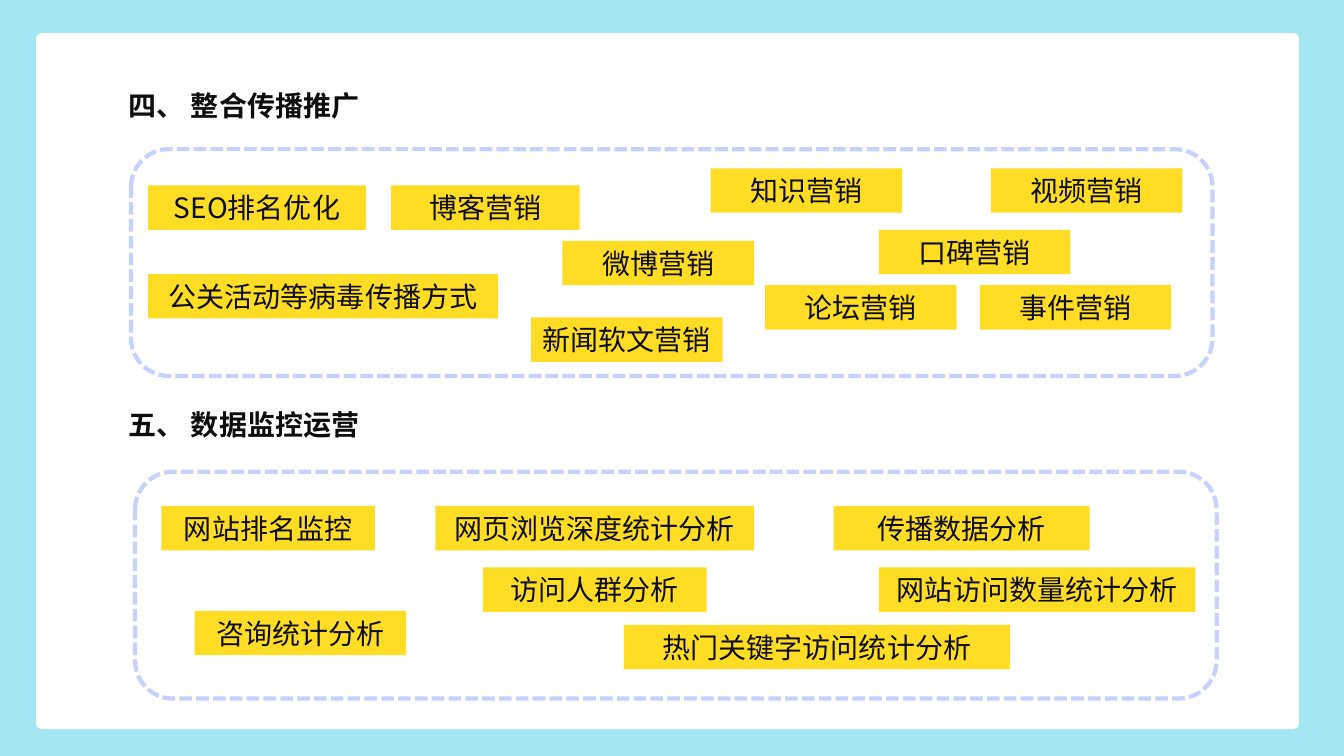
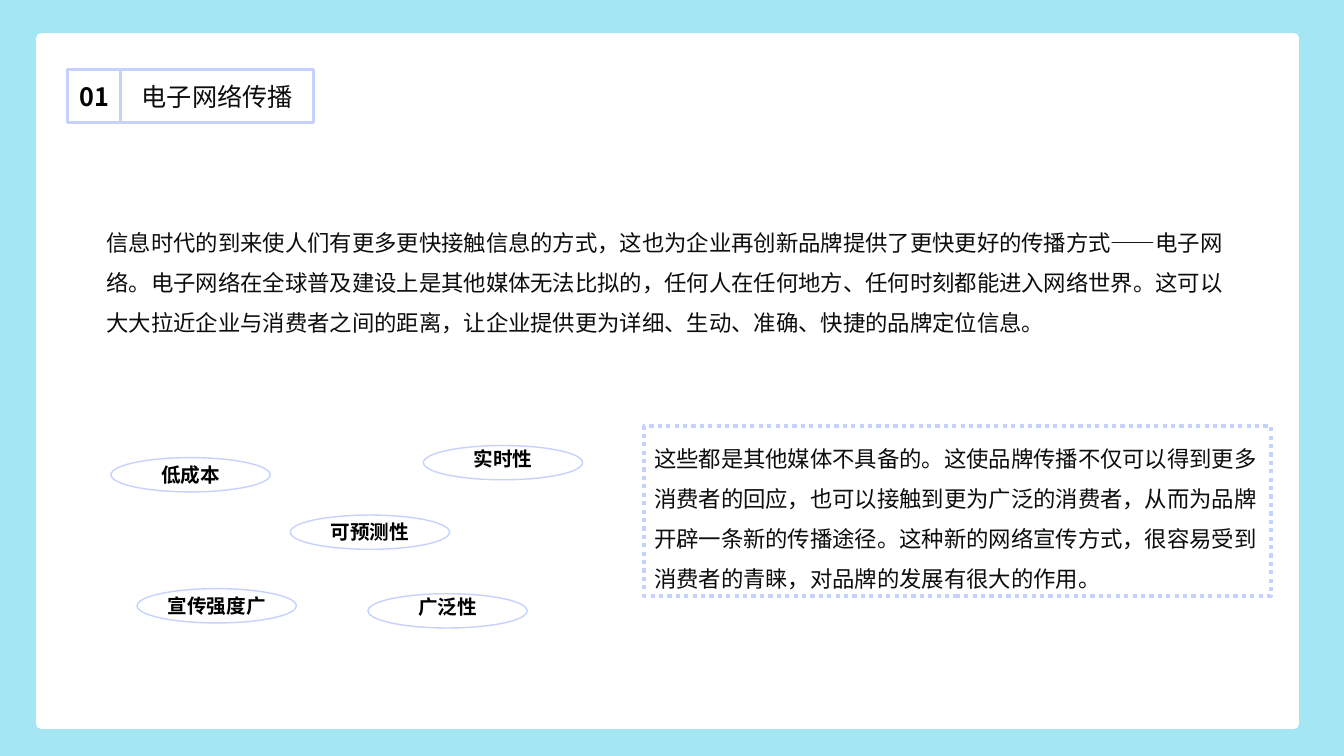
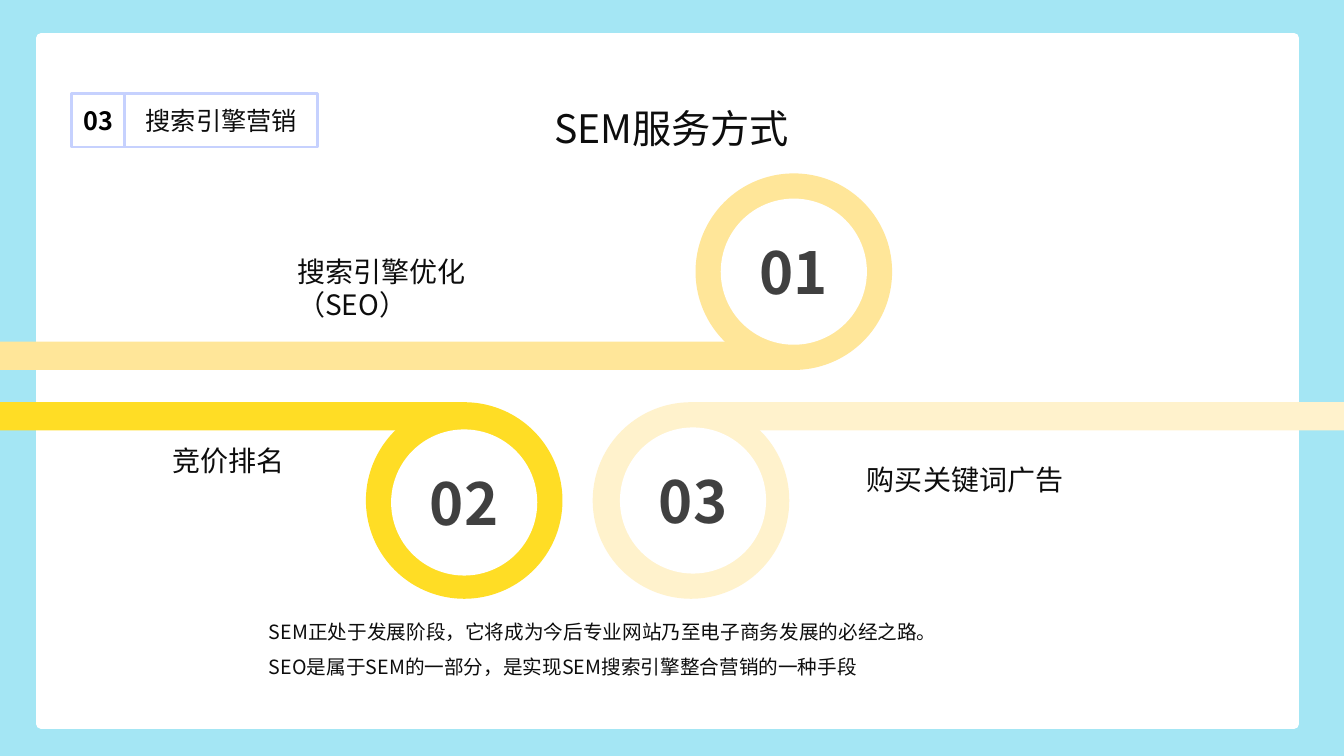
from dataclasses import dataclass

from lxml.etree import SubElement
from pptx import Presentation
from pptx.dml.color import RGBColor
from pptx.enum.dml import MSO_LINE as Dash
from pptx.enum.shapes import MSO_SHAPE as Preset
from pptx.enum.text import MSO_ANCHOR as Anchor, PP_ALIGN as Align
from pptx.oxml.ns import qn
from pptx.shapes.autoshape import Shape
from pptx.slide import Slide
from pptx.util import Inches, Length, Pt

SKY = RGBColor(0xA4, 0xE6, 0xF4)
WHITE = RGBColor(0xFF, 0xFF, 0xFF)
BLACK = RGBColor(0x00, 0x00, 0x00)
INK = RGBColor(0x0D, 0x0D, 0x0D)
GRAY = RGBColor(0x40, 0x40, 0x40)
LAVENDER = RGBColor(0xC6, 0xD1, 0xFE)
YELLOW = RGBColor(0xFF, 0xDD, 0x25)
SAND = RGBColor(0xFF, 0xE6, 0x99)
CREAM = RGBColor(0xFF, 0xF2, 0xCC)

FONT = "Noto Sans CJK SC"
COLUMNS, ROWS = 133.33, 75
TAG_ROWS = 4.4
RING, HOLE, BAND = 19.5, 14.5, 2.8


def cells(count: float) -> Length:
    return Inches(count / 10)


@dataclass(frozen=True)
class Box:
    col: float
    row: float
    cols: float
    rows: float

    def emu(self) -> tuple[Length, ...]:
        return tuple(map(cells, (self.col, self.row, self.cols, self.rows)))


@dataclass(frozen=True)
class Type:
    size: float
    color: RGBColor = INK
    bold: bool = False
    align: Align = Align.CENTER
    anchor: Anchor = Anchor.MIDDLE
    spacing: float = 1.0


@dataclass(frozen=True)
class Border:
    width: float
    dash: Dash | None = None
    color: RGBColor = LAVENDER


@dataclass(frozen=True)
class Tag:
    label: str
    col: float
    row: float
    cols: float = 19


@dataclass(frozen=True)
class Section:
    heading: str
    heading_row: float
    frame: Box
    tags: tuple[Tag, ...]


@dataclass(frozen=True)
class Trait:
    label: str
    col: float
    row: float
    lift: float = 0


@dataclass(frozen=True)
class Loop:
    number: str
    col: float
    row: float
    color: RGBColor
    band_row: float
    to_right: bool = False
    hole_col: float = 2.5
    hole_row: float = 2.5


TAG_TYPE = Type(20)
HEADING_TYPE = Type(20, bold=True)
TRAIT_TYPE = Type(14, BLACK, bold=True)
BADGE_NUMBER_TYPE = Type(18, BLACK, bold=True)
BADGE_TITLE_TYPE = Type(18)
LOOP_TYPE = Type(41.4, GRAY, bold=True)
BODY_TYPE = Type(16, align=Align.LEFT, anchor=Anchor.TOP, spacing=1.5)
NOTE_TYPE = Type(14, align=Align.LEFT, anchor=Anchor.TOP, spacing=1.5)
TITLE_TYPE = Type(28, align=Align.LEFT)
SEO_TYPE = Type(20, align=Align.LEFT)

SECTIONS = (
    Section("四、 整合传播推广", 8.2, Box(13, 14.8, 107.3, 22.5), (
        Tag("SEO排名优化", 14.7, 18.4, 21.6),
        Tag("博客营销", 38.8, 18.4, 18.7),
        Tag("知识营销", 70.5, 16.7),
        Tag("视频营销", 98.3, 16.7),
        Tag("微博营销", 55.8, 23.9),
        Tag("口碑营销", 87.2, 22.8),
        Tag("公关活动等病毒传播方式", 14.7, 27.2, 34.7),
        Tag("论坛营销", 75.9, 28.3),
        Tag("事件营销", 97.2, 28.3),
        Tag("新闻软文营销", 52.7, 31.5),
    )),
    Section("五、 数据监控运营", 39.9, Box(13.4, 46.8, 107.3, 22.5), (
        Tag("网站排名监控", 16, 50.2, 21.2),
        Tag("网页浏览深度统计分析", 43.2, 50.2, 31.6),
        Tag("传播数据分析", 82.7, 50.2, 25.4),
        Tag("访问人群分析", 47.9, 56.3, 22.2),
        Tag("网站访问数量统计分析", 87.2, 56.3, 31.4),
        Tag("咨询统计分析", 19.3, 60.6, 21),
        Tag("热门关键字访问统计分析", 61.9, 62, 38.3),
    )),
)

TRAITS = (
    Trait("低成本", 11, 45.4),
    Trait("实时性", 42, 44.2, 0.4),
    Trait("可预测性", 28.8, 51.1),
    Trait("宣传强度广", 13.6, 58.4),
    Trait("广泛性", 36.5, 58.9, 0.4),
)

LOOPS = (
    Loop("02", 36.3, 39.9, YELLOW, 39.9, hole_row=2.7),
    Loop("01", 69, 17.2, SAND, 33.9),
    Loop("03", 58.8, 39.9, CREAM, 39.9, to_right=True, hole_col=2.7),
)

INTRO = (
    "信息时代的到来使人们有更多更快接触信息的方式，这也为企业再创新品牌提供了更快更好的传播方式——电子网络。"
    "电子网络在全球普及建设上是其他媒体无法比拟的，任何人在任何地方、任何时刻都能进入网络世界。"
    "这可以大大拉近企业与消费者之间的距离，让企业提供更为详细、生动、准确、快捷的品牌定位信息。"
)
BENEFIT = (
    "这些都是其他媒体不具备的。这使品牌传播不仅可以得到更多消费者的回应，也可以接触到更为广泛的消费者，"
    "从而为品牌开辟一条新的传播途径。这种新的网络宣传方式，很容易受到消费者的青睐，对品牌的发展有很大的作用。"
)
SEM_NOTE = (
    "SEM正处于发展阶段，它将成为今后专业网站乃至电子商务发展的必经之路。\n"
    "SEO是属于SEM的一部分，是实现SEM搜索引擎整合营销的一种手段"
)


def write(holder: Shape, text: str, style: Type) -> None:
    frame = holder.text_frame
    frame.word_wrap = True
    frame.vertical_anchor = style.anchor
    frame.text = text
    for paragraph in frame.paragraphs:
        paragraph.alignment = style.align
        paragraph.line_spacing = style.spacing
        font = paragraph.font
        font.size = Pt(style.size)
        font.bold = style.bold
        font.color.rgb = style.color
        font.name = FONT
        defaults = paragraph._p.pPr.find(qn("a:defRPr"))
        SubElement(defaults, qn("a:ea"), typeface=FONT)


def add_text(slide: Slide, box: Box, text: str, style: Type) -> None:
    write(slide.shapes.add_textbox(*box.emu()), text, style)


def add_figure(slide: Slide, preset: Preset, box: Box, fill: RGBColor | None = None,
               border: Border | None = None) -> Shape:
    figure = slide.shapes.add_shape(preset, *box.emu())
    figure.shadow.inherit = False
    if fill is None:
        figure.fill.background()
    else:
        figure.fill.solid()
        figure.fill.fore_color.rgb = fill
    if border is None:
        figure.line.fill.background()
    else:
        figure.line.color.rgb = border.color
        figure.line.width = Pt(border.width)
        if border.dash is not None:
            figure.line.dash_style = border.dash
    return figure


def clear_insets(figure: Shape, bottom: float = 0) -> None:
    frame = figure.text_frame
    frame.margin_left = frame.margin_right = frame.margin_top = 0
    frame.margin_bottom = cells(bottom)


def add_page(deck: Presentation) -> Slide:
    slide = deck.slides.add_slide(deck.slide_layouts[6])
    add_figure(slide, Preset.RECTANGLE, Box(4.1, 3.8, 124.3, 68), WHITE, Border(7.25, color=WHITE))
    return slide


def add_badge(slide: Slide, col: float, row: float, number: str, title: str) -> None:
    side = 5.3
    for box, text, style in (
        (Box(col, row, side, side), number, BADGE_NUMBER_TYPE),
        (Box(col + side, row, 19.1, side), title, BADGE_TITLE_TYPE),
    ):
        cell = add_figure(slide, Preset.RECTANGLE, box, WHITE, Border(2))
        clear_insets(cell)
        write(cell, text, style)


def add_section(slide: Slide, section: Section) -> None:
    add_text(slide, Box(9.6, section.heading_row, 29.2, TAG_ROWS), section.heading, HEADING_TYPE)
    for tag in section.tags:
        label = add_figure(slide, Preset.RECTANGLE, Box(tag.col, tag.row, tag.cols, TAG_ROWS), YELLOW)
        write(label, tag.label, TAG_TYPE)
    add_figure(slide, Preset.ROUNDED_RECTANGLE, section.frame, border=Border(3, Dash.SQUARE_DOT))


def add_trait(slide: Slide, trait: Trait) -> None:
    oval = add_figure(slide, Preset.OVAL, Box(trait.col, trait.row, 15.8, 3.4), WHITE, Border(1))
    clear_insets(oval, bottom=2 * trait.lift)
    write(oval, trait.label, TRAIT_TYPE)


def add_loop(slide: Slide, loop: Loop) -> None:
    center = loop.col + RING / 2
    start, end = (center, COLUMNS) if loop.to_right else (0, center)
    add_figure(slide, Preset.RECTANGLE, Box(start, loop.band_row, end - start, BAND), loop.color)
    add_figure(slide, Preset.OVAL, Box(loop.col, loop.row, RING, RING), loop.color)
    hole = add_figure(slide, Preset.OVAL,
                      Box(loop.col + loop.hole_col, loop.row + loop.hole_row, HOLE, HOLE), WHITE)
    clear_insets(hole)
    write(hole, loop.number, LOOP_TYPE)


def build_promotion(deck: Presentation) -> None:
    slide = add_page(deck)
    for section in SECTIONS:
        add_section(slide, section)


def build_network(deck: Presentation) -> None:
    slide = add_page(deck)
    add_badge(slide, 6.7, 6.9, "01", "电子网络传播")
    add_text(slide, Box(9.6, 20.9, 114.2, 12.7), INTRO, BODY_TYPE)
    benefit = add_figure(slide, Preset.RECTANGLE, Box(63.9, 42.3, 62.2, 16.8),
                         border=Border(3, Dash.ROUND_DOT))
    write(benefit, BENEFIT, BODY_TYPE)
    for trait in TRAITS:
        add_trait(slide, trait)


def build_search(deck: Presentation) -> None:
    slide = add_page(deck)
    add_badge(slide, 7.1, 9.3, "03", "搜索引擎营销")
    add_text(slide, Box(54, 9.8, 70, 5.7), "SEM服务方式", TITLE_TYPE)
    add_text(slide, Box(28.5, 24.6, 19.5, 7.9), "搜索引擎优化（SEO）", SEO_TYPE)
    add_text(slide, Box(9.5, 41.7, 26.4, 7.9), "竞价排名", TAG_TYPE)
    add_text(slide, Box(78.8, 43.6, 33.9, 7.9), "购买关键词广告", TAG_TYPE)
    add_text(slide, Box(25.7, 59.8, 78.8, 7.7), SEM_NOTE, NOTE_TYPE)
    for loop in LOOPS:
        add_loop(slide, loop)


def main() -> None:
    deck = Presentation()
    deck.slide_width, deck.slide_height = cells(COLUMNS), cells(ROWS)
    backdrop = deck.slide_master.background.fill
    backdrop.solid()
    backdrop.fore_color.rgb = SKY
    for build in (build_promotion, build_network, build_search):
        build(deck)
    deck.save("out.pptx")


if __name__ == "__main__":
    main()
